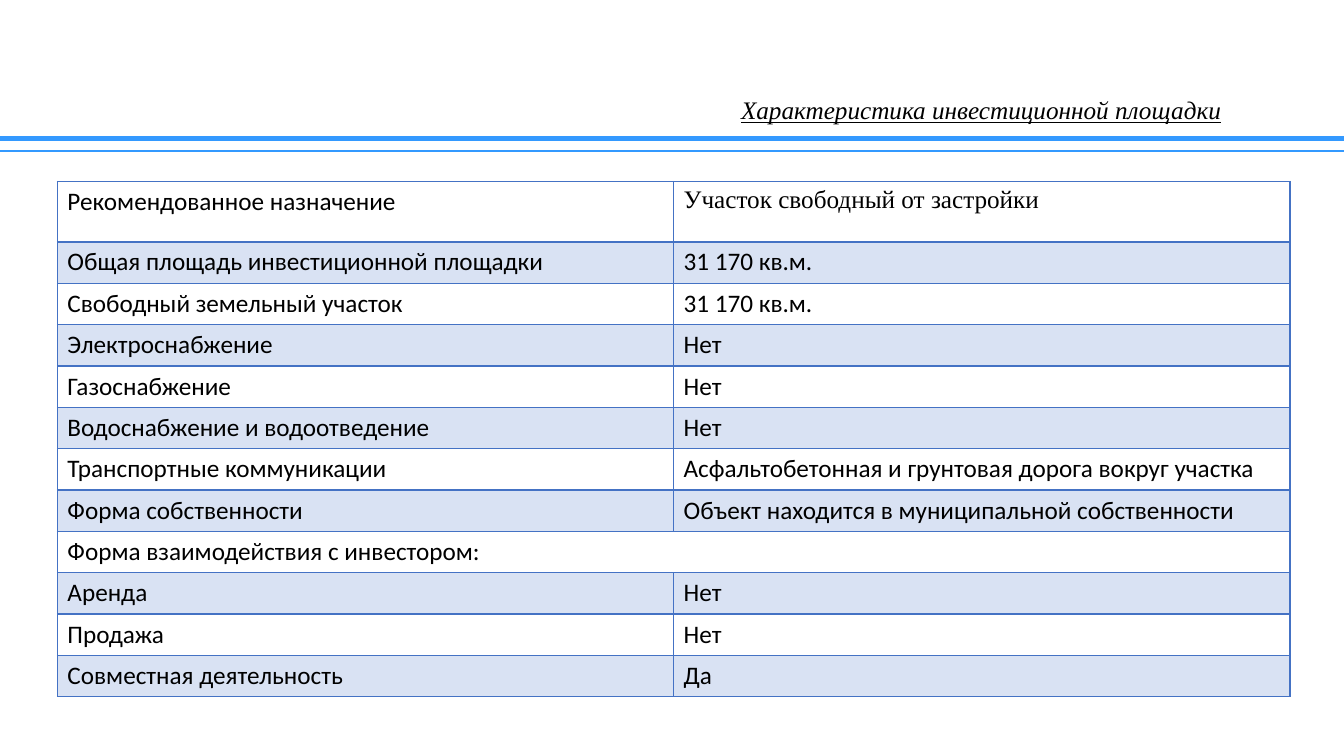
from lxml.etree import SubElement
from pptx import Presentation
from pptx.dml.color import RGBColor
from pptx.enum.shapes import MSO_CONNECTOR
from pptx.enum.text import MSO_ANCHOR, PP_ALIGN
from pptx.oxml.ns import qn
from pptx.util import Pt

BLACK = RGBColor(0x00, 0x00, 0x00)
RULE_BLUE = RGBColor(0x33, 0x99, 0xFF)
TABLE_BLUE = RGBColor(0x44, 0x72, 0xC4)

ROWS = [
    ("Рекомендованное назначение", "Участок свободный от застройки"),
    ("Общая площадь инвестиционной площадки", "31 170 кв.м."),
    ("Свободный земельный участок", "31 170 кв.м."),
    ("Электроснабжение", "Нет"),
    ("Газоснабжение", "Нет"),
    ("Водоснабжение и водоотведение", "Нет"),
    ("Транспортные коммуникации", "Асфальтобетонная и грунтовая дорога вокруг участка"),
    ("Форма собственности", "Объект находится в муниципальной собственности"),
    ("Форма взаимодействия с инвестором:", None),
    ("Аренда", "Нет"),
    ("Продажа", "Нет"),
    ("Совместная деятельность", "Да"),
]
HEADER_HEIGHT, ROW_HEIGHT, COLUMN_WIDTH = 43.2, 29.55, 440.2


def add_border(cell, side, width):
    line = SubElement(cell._tc.get_or_add_tcPr(), qn(f"a:{side}"), w=str(Pt(width)))
    fill = SubElement(line, qn("a:solidFill"))
    SubElement(fill, qn("a:srgbClr"), val=str(TABLE_BLUE))


def style_text(paragraph, font_name):
    paragraph.font.name = font_name
    paragraph.font.size = Pt(18)
    paragraph.font.color.rgb = BLACK


presentation = Presentation()
presentation.slide_width = Pt(960)
presentation.slide_height = Pt(540)
slide = presentation.slides.add_slide(presentation.slide_layouts[6])

for top, width in ((99, 3.5), (108, 1.5)):
    rule = slide.shapes.add_connector(
        MSO_CONNECTOR.STRAIGHT, Pt(0), Pt(top), Pt(960), Pt(top))
    rule.line.color.rgb = RULE_BLUE
    rule.line.width = Pt(width)
    SubElement(rule._element.spPr, qn("a:effectLst"))

title = slide.shapes.add_textbox(Pt(480.2), Pt(69.8), Pt(441.4), Pt(19.4))
title.text_frame.word_wrap = True
title.text_frame.vertical_anchor = MSO_ANCHOR.MIDDLE
paragraph = title.text_frame.paragraphs[0]
paragraph.text = "Характеристика инвестиционной площадки"
paragraph.alignment = PP_ALIGN.CENTER
paragraph.line_spacing = 0.9
style_text(paragraph, "Times New Roman")
paragraph.font.italic = True
paragraph.font.underline = True

table_height = HEADER_HEIGHT + ROW_HEIGHT * (len(ROWS) - 1)
table = slide.shapes.add_table(
    len(ROWS), 2, Pt(41), Pt(129.6), Pt(2 * COLUMN_WIDTH), Pt(table_height)).table
table.first_row = False
table.horz_banding = False
for column in table.columns:
    column.width = Pt(COLUMN_WIDTH)

for row_index, texts in enumerate(ROWS):
    table.rows[row_index].height = Pt(ROW_HEIGHT if row_index else HEADER_HEIGHT)
    for column_index, text in enumerate(texts):
        cell = table.cell(row_index, column_index)
        add_border(cell, "lnL", 1)
        add_border(cell, "lnR", 1)
        add_border(cell, "lnT", 2 if row_index == 1 else 1)
        add_border(cell, "lnB", 2 if row_index == 0 else 1)
        if row_index % 2:
            cell.fill.solid()
            cell.fill.fore_color.rgb = TABLE_BLUE
            color = cell._tc.tcPr.find(qn("a:solidFill")).find(qn("a:srgbClr"))
            SubElement(color, qn("a:alpha"), val="20000")
        else:
            cell.fill.background()
        if text:
            cell.text = text
            is_purpose = (row_index, column_index) == (0, 1)
            style_text(cell.text_frame.paragraphs[0],
                       "Times New Roman" if is_purpose else "Calibri")
    if texts[1] is None:
        table.cell(row_index, 0).merge(table.cell(row_index, 1))

presentation.save("out.pptx")
